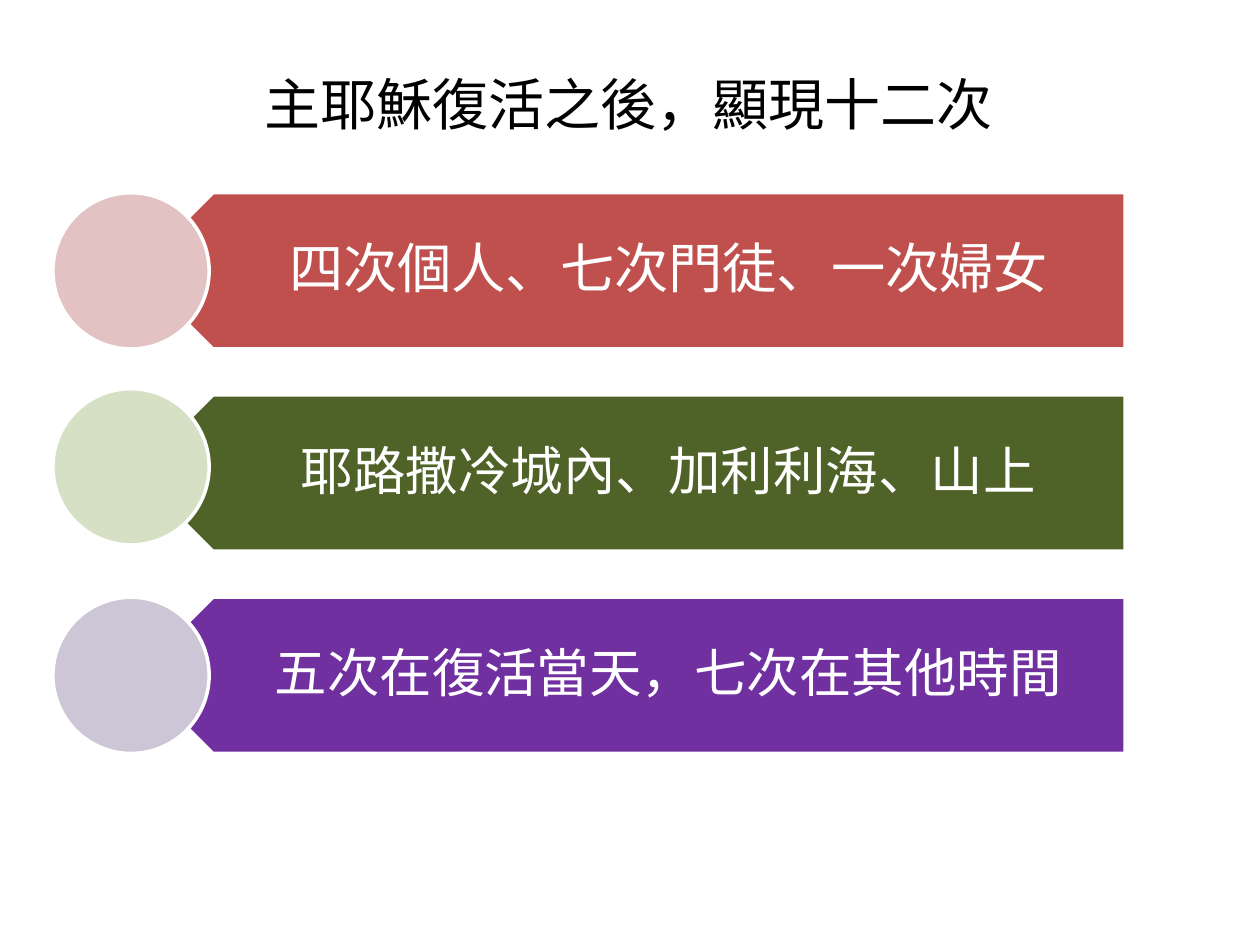
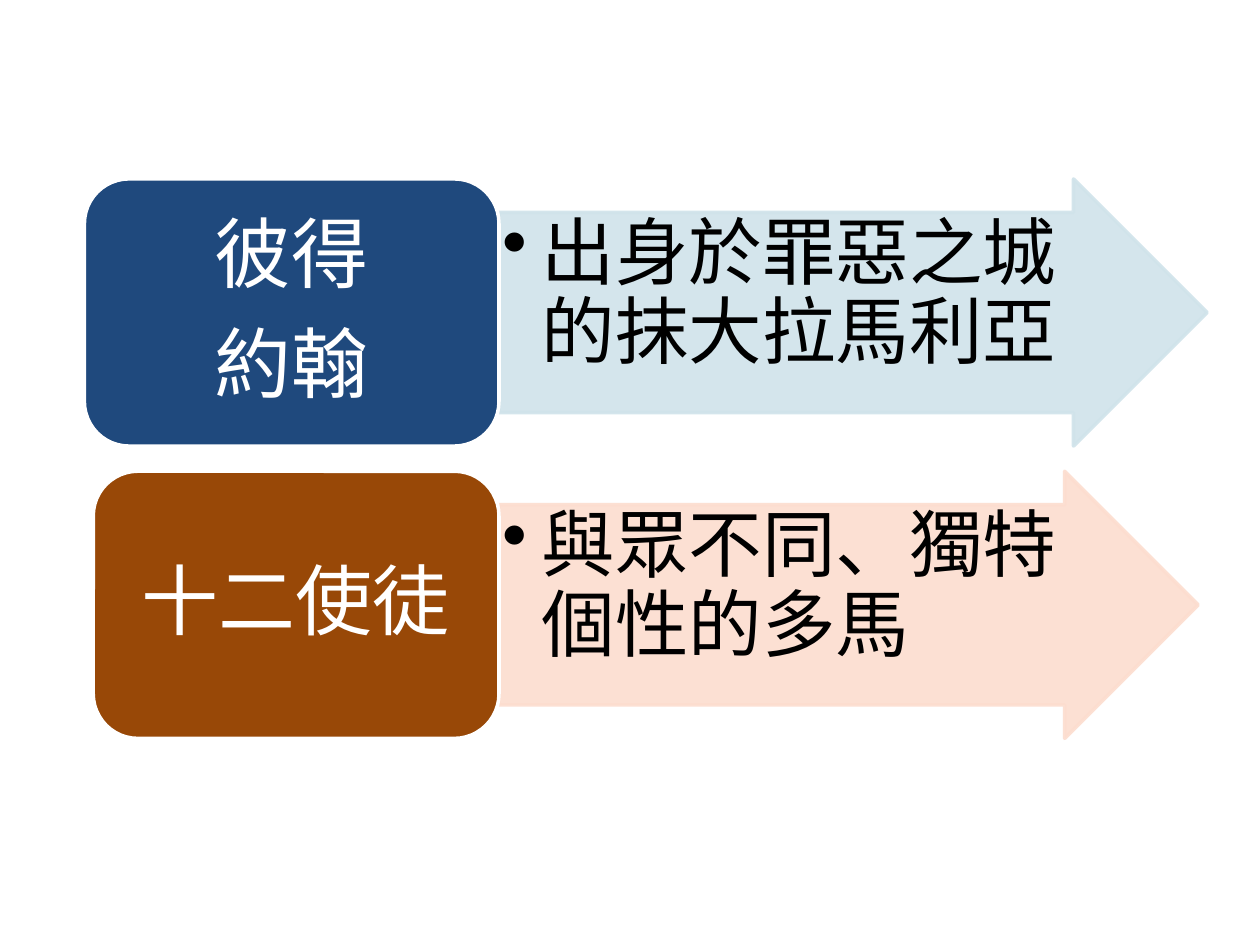
from dataclasses import dataclass
from lxml.etree import SubElement as Sub
from pptx import Presentation
from pptx.dml.color import RGBColor
from pptx.enum.shapes import MSO_SHAPE as Form
from pptx.enum.text import MSO_ANCHOR as Anchor, PP_ALIGN as Align
from pptx.oxml.ns import qn
from pptx.util import Inches, Pt


@dataclass(frozen=True)
class Theme:
    font: str = "Noto Sans CJK SC"
    white: str = "FFFFFF"
    black: str = "000000"
    title: int = 32
    label: int = 44
    point: int = 42
    edge: int = 2


LOOK = Theme()
TITLE = "主耶穌復活之後，顯現十二次"
BANDS = [
    ("四次個人、七次門徒、一次婦女", 31, "C0504D", "E2C2C2", 0),
    ("耶路撒冷城內、加利利海、山上", 30, "4F6228", "D5E0C4", -0.05),
    ("五次在復活當天，七次在其他時間", 30, "7030A0", "CDC6D7", 0),
]
ROWS = [
    ("彼得\n約翰", "出身於罪惡之城的抹大拉馬利亞", "1F497D", "D0E3EA", 0.67, 9.58),
    ("十二使徒", "與眾不同、獨特個性的多馬", "984807", "FCDDCF", 0.74, 9.51),
]


def place(item, box):
    item.left, item.top, item.width, item.height = map(Inches, box)


def draw(slide, form, box, fill, line=LOOK.white):
    item = slide.shapes.add_shape(form, *map(Inches, box))
    item.shadow.inherit = False
    item.fill.solid()
    item.fill.fore_color.rgb = RGBColor.from_string(fill)
    item.line.color.rgb = RGBColor.from_string(line)
    item.line.width = Pt(LOOK.edge)
    return item


def write(item, text, size, color, pads, align=Align.CENTER, anchor=Anchor.MIDDLE, after=0, lead=0.9):
    frame = item.text_frame
    frame.text = text
    frame.word_wrap = True
    frame.vertical_anchor = anchor
    frame.margin_left, frame.margin_top, frame.margin_right, frame.margin_bottom = map(Inches, pads)
    for para in frame.paragraphs:
        para.alignment = align
        para.line_spacing = lead
        para.space_after = Pt(after * size)
        for run in para.runs:
            run.font.size = Pt(size)
            run.font.name = LOOK.font
            run.font.color.rgb = RGBColor.from_string(color)
            Sub(run.font._element, qn("a:ea"), typeface=LOOK.font)


def fade(item, share):
    for node in item._element.spPr.iter(qn("a:srgbClr")):
        Sub(node, qn("a:alpha"), val=str(share * 1000))


def bullet(item, indent):
    for para in item.text_frame.paragraphs:
        props = para._p.get_or_add_pPr()
        props.set("marL", str(Inches(indent)))
        props.set("indent", str(-Inches(indent)))
        Sub(props, qn("a:buChar"), char="•")


def band(slide, box, text, size, fill, tint, shift):
    left, top, width, high = box
    plate = draw(slide, Form.PENTAGON, (left + 0.65, top, width - 0.65, high), fill)
    plate.adjustments[0] = 0.5
    plate._element.spPr.xfrm.set("flipH", "1")
    write(plate, text, size, LOOK.white, (0.54, 0.12, 0.24, 0.12), after=0.35)
    draw(slide, Form.OVAL, (left, top + shift, high, high), tint)


def row(slide, box, label, point, fill, tint):
    left, top, width, high = box
    split = 3.96
    arrow = draw(slide, Form.RIGHT_ARROW, (split, top, left + width - split, high), tint, tint)
    arrow.adjustments[0], arrow.adjustments[1] = 0.75, 0.5
    fade(arrow, 90)
    write(arrow, point, LOOK.point, LOOK.black, [0.03] * 4, Align.LEFT, Anchor.TOP, 0.15)
    bullet(arrow, 0.31)
    card = draw(slide, Form.ROUNDED_RECTANGLE, (left, top, split - left, high), fill)
    write(card, label, LOOK.label, LOOK.white, (0.18, 0.09, 0.18, 0.09), after=0.35)


def visits(deck):
    slide = deck.slides.add_slide(deck.slide_layouts[5])
    title = slide.shapes.title
    place(title, (2, 0.5, 6.04, 0.64))
    write(title, TITLE, LOOK.title, LOOK.black, (0.1, 0.05, 0.1, 0.05), Align.LEFT, lead=1)
    for step, parts in enumerate(BANDS):
        band(slide, (0.42, 1.53 + step * 1.605, 8.51, 1.24), *parts)


def people(deck):
    slide = deck.slides.add_slide(deck.slide_layouts[6])
    for step, (label, point, fill, tint, left, right) in enumerate(ROWS):
        row(slide, (left, 1.42 + step * 2.32, right - left, 2.12), label, point, fill, tint)


def main():
    deck = Presentation()
    deck.slide_width, deck.slide_height = Inches(10), Inches(7.5)
    visits(deck)
    people(deck)
    deck.save("out.pptx")


if __name__ == "__main__":
    main()
